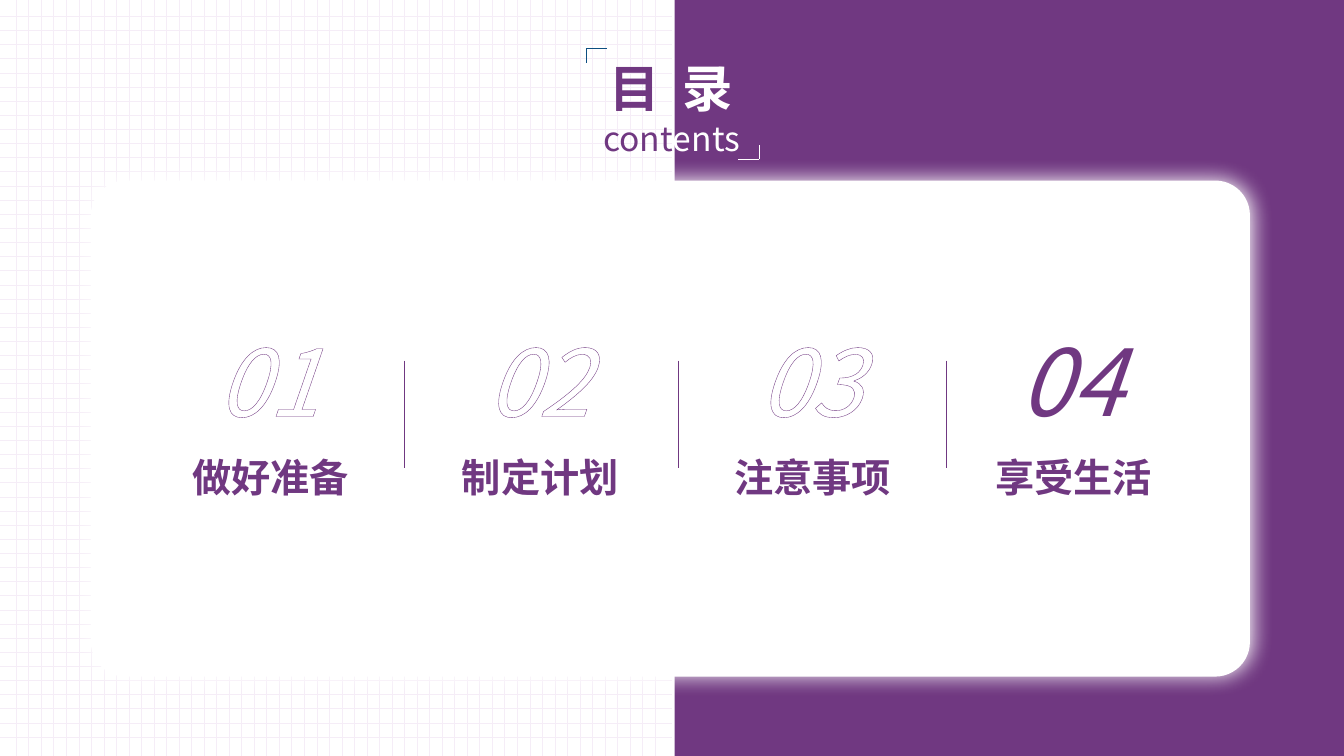
from lxml.etree import SubElement
from pptx import Presentation
from pptx.dml.color import RGBColor
from pptx.enum.shapes import MSO_CONNECTOR, MSO_SHAPE
from pptx.enum.text import MSO_ANCHOR, MSO_AUTO_SIZE, PP_ALIGN
from pptx.oxml.ns import qn
from pptx.util import Cm, Pt

PURPLE = RGBColor(0x70, 0x38, 0x81)
PALE = RGBColor(0xF5, 0xED, 0xF7)
BLUE = RGBColor(0x0D, 0x4E, 0x81)
WHITE = RGBColor(0xFF, 0xFF, 0xFF)
SHADOW = RGBColor(0x40, 0x40, 0x40)
FONT = "Noto Sans CJK SC"

# Content: lengths in centimetres
WIDTH, HEIGHT = 33.87, 19.05
TITLE_BOX = (11.58, 1.3, 10.69, 2.82)
TITLE_LINES = [
    ([("目 ", PURPLE), ("录", WHITE)], {"size": Pt(36), "bold": True}),
    ([("cont", PURPLE), ("ents", WHITE)], {"size": Pt(24), "bold": False}),
]
CHAPTERS = [  # number, name, left edge of number, number colour
    ("01", "做好准备", 5.21, WHITE),
    ("02", "制定计划", 12.01, WHITE),
    ("03", "注意事项", 18.87, WHITE),
    ("04", "享受生活", 25.45, PURPLE),
]
NUMBER_FORMAT = {"size": Pt(66), "italic": True}
NAME_FORMAT = {"size": Pt(28), "bold": True}
NAME_OFFSET = -2.6
DIVIDERS = [10.19, 17.09, 23.85]
DIVIDER_SPAN = (9.09, 11.79)
CORNERS = [  # corner x, y, horizontal arm, vertical arm, colour
    (14.78, 1.22, 0.52, 0.37, BLUE),
    (19.13, 4.02, -0.52, -0.37, WHITE),
]
GRID_COUNT, GRID_START, GRID_BOTTOM, GRID_RIGHT = 52, 0.41, 18.57, 16.51
GRID_EDGE = 16.94

presentation = Presentation()
presentation.slide_width, presentation.slide_height = Cm(WIDTH), Cm(HEIGHT)
slide = presentation.slides.add_slide(presentation.slide_layouts[5])
shapes = slide.shapes


def add_line(x1, y1, x2, y2, color, weight=0.5):
    line = shapes.add_connector(MSO_CONNECTOR.STRAIGHT, Cm(x1), Cm(y1), Cm(x2), Cm(y2))
    line.line.color.rgb = color
    line.line.width = Pt(weight)
    SubElement(line._element.spPr, qn("a:effectLst"))


def add_block(preset, left, top, width, height, color):
    block = shapes.add_shape(preset, Cm(left), Cm(top), Cm(width), Cm(height))
    block.shadow.inherit = False
    block.fill.solid()
    block.fill.fore_color.rgb = color
    block.line.fill.background()
    return block


def prepare_frame(shape):
    frame = shape.text_frame
    frame.word_wrap = True
    frame.auto_size = MSO_AUTO_SIZE.NONE
    frame.vertical_anchor = MSO_ANCHOR.MIDDLE
    return frame


def add_run(paragraph, text, color, formats):
    run = paragraph.add_run()
    run.text = text
    run.font.color.rgb = color
    run.font.name = FONT
    for name, value in formats.items():
        setattr(run.font, name, value)
    SubElement(run.font._element, qn("a:ea"), typeface=FONT)
    return run


def add_text(box, text, color, formats, alignment):
    textbox = shapes.add_textbox(*[Cm(value) for value in box])
    paragraph = prepare_frame(textbox).paragraphs[0]
    paragraph.alignment = alignment
    return add_run(paragraph, text, color, formats)


def add_solid_fill(parent, color):
    fill = SubElement(parent, qn("a:solidFill"))
    return SubElement(fill, qn("a:srgbClr"), val=str(color))


# Fine grid on the left half
for index in range(GRID_COUNT):
    share = index / (GRID_COUNT - 1)
    y = GRID_START + (GRID_BOTTOM - GRID_START) * share
    add_line(0, y, GRID_EDGE, y, PALE, 0.25)
for index in range(GRID_COUNT):
    x = GRID_START + (GRID_RIGHT - GRID_START) * index / (GRID_COUNT - 1)
    add_line(x, 0, x, HEIGHT, PALE)

# Purple half and white card with a soft shadow
add_block(MSO_SHAPE.RECTANGLE, 17, 0, WIDTH - 17, HEIGHT, PURPLE)
card = add_block(MSO_SHAPE.ROUNDED_RECTANGLE, 2.29, 4.55, 29.21, 12.5, WHITE)
card.adjustments[0] = 0.07
effects = card._element.spPr.find(qn("a:effectLst"))
shadow = SubElement(effects, qn("a:outerShdw"), blurRad=str(Pt(15)), dist=str(Pt(2)),
                    dir="0", algn="ctr", rotWithShape="0")
SubElement(add_solid_fill(shadow, SHADOW), qn("a:alpha"), val="40000")

# Two-colour title, raised above the background
title = shapes.title
title.left, title.top, title.width, title.height = [Cm(value) for value in TITLE_BOX]
shapes._spTree.append(title._element)
title_frame = prepare_frame(title)
for index, (parts, formats) in enumerate(TITLE_LINES):
    paragraph = title_frame.add_paragraph() if index else title_frame.paragraphs[0]
    paragraph.alignment = PP_ALIGN.CENTER
    for text, color in parts:
        run = add_run(paragraph, text, color, formats)
        if text.endswith(" "):
            run.font._element.set("spc", "400")

# Corner marks around the title
for x, y, across, down, color in CORNERS:
    add_line(x, y, x + across, y, color)
    add_line(x, y, x, y + down, color)

# Chapter numbers and names
for number, name, left, color in CHAPTERS:
    run = add_text((left, 8.03, 5.54, 3.07), number, color, NUMBER_FORMAT, PP_ALIGN.LEFT)
    properties = run.font._element
    outline = SubElement(properties, qn("a:ln"), w=str(Pt(0.75)))
    add_solid_fill(outline, PURPLE)
    properties.insert(0, outline)
    add_text((left + NAME_OFFSET, 11.3, 8.41, 1.45), name, PURPLE, NAME_FORMAT,
             PP_ALIGN.CENTER)

# Dividers between chapters
for x in DIVIDERS:
    add_line(x, DIVIDER_SPAN[0], x, DIVIDER_SPAN[1], PURPLE)

presentation.save("out.pptx")
